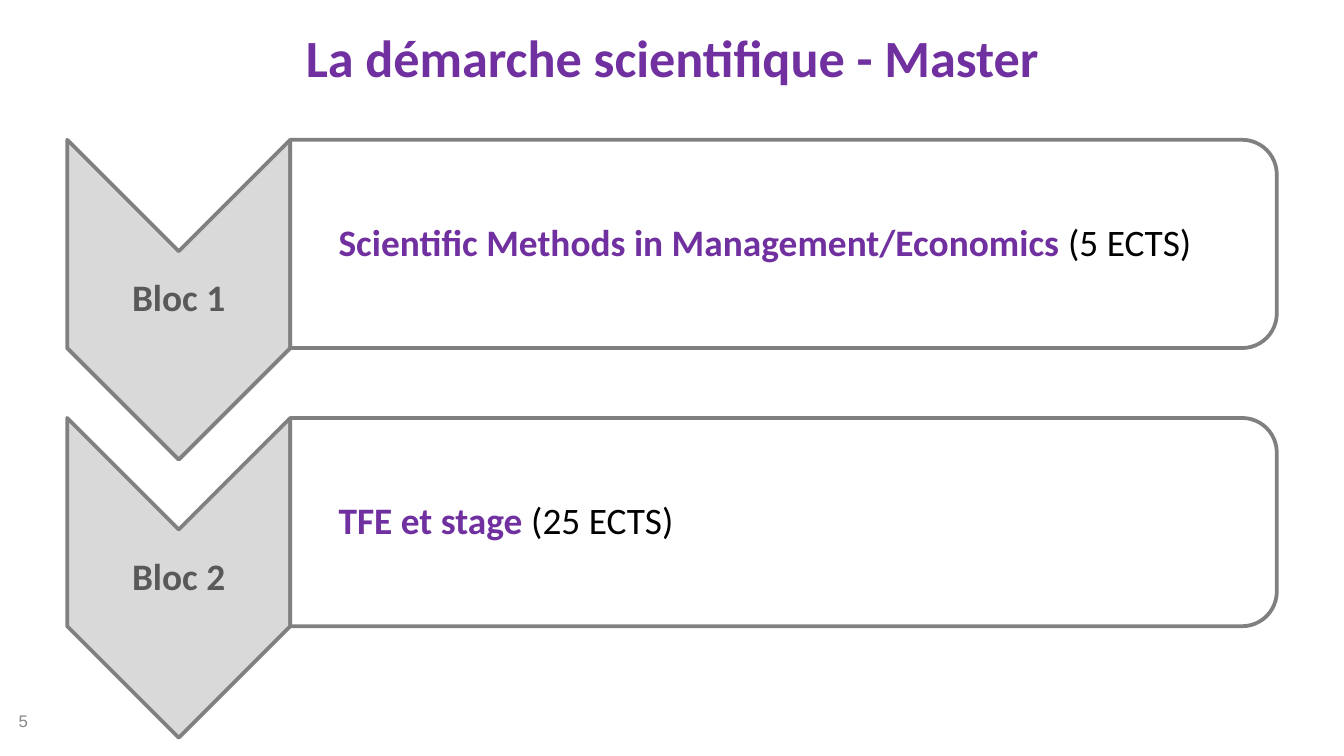
from lxml.etree import SubElement
from pptx import Presentation
from pptx.dml.color import RGBColor
from pptx.enum.shapes import MSO_SHAPE
from pptx.enum.text import MSO_ANCHOR, PP_ALIGN
from pptx.oxml.ns import qn
from pptx.util import Inches, Pt

PURPLE = RGBColor(0x70, 0x30, 0xA0)
DARK_GRAY = RGBColor(0x59, 0x59, 0x59)
MID_GRAY = RGBColor(0x80, 0x80, 0x80)
LIGHT_GRAY = RGBColor(0xD9, 0xD9, 0xD9)
NUMBER_GRAY = RGBColor(0x89, 0x89, 0x89)
WHITE = RGBColor(0xFF, 0xFF, 0xFF)
BLACK = RGBColor(0x00, 0x00, 0x00)

BLOCKS = [
    ("Bloc 1", "Scientific Methods in Management/Economics ", "(5 ECTS)"),
    ("Bloc 2", "TFE et stage ", "(25 ECTS)"),
]
SLIDE_WIDTH = 10
FIRST_TOP = 1.04
BLOCK_STEP = 2.07
CHEVRON_LEFT, CHEVRON_WIDTH, CHEVRON_HEIGHT = 0.5, 1.66, 2.38
PANEL_LEFT, PANEL_WIDTH, PANEL_HEIGHT = 2.16, 7.34, 1.55
THIN_MARGINS = (0.01, 0.01, 0.01, 0.01)
PANEL_MARGINS = (0.16, 0.01, 0.01, 0.01)


class SlideBuilder:
    def __init__(self, slide):
        self.slide = slide
        self.font_name = "Calibri"
        self.line_width = Pt(2)

    def text(self, left, top, width, height, runs, align=PP_ALIGN.LEFT,
             anchor=MSO_ANCHOR.MIDDLE, margins=(0.1, 0.05, 0.1, 0.05),
             indent=0, line_spacing=1.0):
        """Add a text box holding one paragraph; runs are (text, font values) pairs."""
        box = self.slide.shapes.add_textbox(
            Inches(left), Inches(top), Inches(width), Inches(height))
        frame = box.text_frame
        frame.word_wrap = True
        frame.vertical_anchor = anchor
        for side, margin in zip(("left", "top", "right", "bottom"), margins):
            setattr(frame, f"margin_{side}", Inches(margin))
        paragraph = frame.paragraphs[0]
        paragraph.alignment = align
        paragraph.line_spacing = line_spacing
        if indent:
            paragraph._p.get_or_add_pPr().set("marL", str(Inches(indent)))
        for content, values in runs:
            run = paragraph.add_run()
            run.text = content
            self.format_font(run.font, values)

    def format_font(self, font, values):
        values = {"name": self.font_name, **values}
        font.color.rgb = values.pop("color")
        for name, value in values.items():
            setattr(font, name, value)

    def turned_shape(self, kind, left, top, width, height, fill, opacity=100):
        """Add a shape turned by 90 degrees that covers the given area once turned."""
        shape = self.slide.shapes.add_shape(
            kind,
            Inches(left + (width - height) / 2), Inches(top + (height - width) / 2),
            Inches(height), Inches(width))
        shape.rotation = 90
        shape.shadow.inherit = False
        shape.fill.solid()
        shape.fill.fore_color.rgb = fill
        if opacity < 100:
            color = shape._element.spPr.find(qn("a:solidFill"))[0]
            SubElement(color, qn("a:alpha"), val=str(opacity * 1000))
        shape.line.color.rgb = MID_GRAY
        shape.line.width = self.line_width

    def block(self, top, label, course, credits):
        """Add a chevron with its label and the panel beside it."""
        label_font = {"size": Pt(20), "bold": True, "color": DARK_GRAY}
        course_font = {"size": Pt(20), "bold": True, "color": PURPLE}
        credits_font = {"size": Pt(20), "bold": False, "color": BLACK}
        self.turned_shape(MSO_SHAPE.CHEVRON, CHEVRON_LEFT, top,
                          CHEVRON_WIDTH, CHEVRON_HEIGHT, LIGHT_GRAY)
        self.text(CHEVRON_LEFT, top + CHEVRON_WIDTH / 2, CHEVRON_WIDTH,
                  CHEVRON_HEIGHT - CHEVRON_WIDTH, [(label, label_font)],
                  align=PP_ALIGN.CENTER, margins=THIN_MARGINS, line_spacing=0.9)
        self.turned_shape(MSO_SHAPE.ROUND_2_SAME_RECTANGLE, PANEL_LEFT, top,
                          PANEL_WIDTH, PANEL_HEIGHT, WHITE, opacity=90)
        self.text(PANEL_LEFT, top + 0.08, PANEL_WIDTH - 0.08, PANEL_HEIGHT - 0.15,
                  [(course, course_font), (credits, credits_font)],
                  margins=PANEL_MARGINS, indent=0.2, line_spacing=0.9)


def main():
    presentation = Presentation()
    presentation.slide_width = Inches(SLIDE_WIDTH)
    presentation.slide_height = Inches(SLIDE_WIDTH * 9 / 16)
    builder = SlideBuilder(presentation.slides.add_slide(presentation.slide_layouts[6]))

    builder.text(0.04, 5.21, 2.33, 0.3,
                 [("5", {"name": "Arial", "size": Pt(9), "color": NUMBER_GRAY})])
    builder.text(0.5, 0.14, 9, 0.62,
                 [("La démarche scientifique - Master",
                   {"size": Pt(28), "bold": True, "color": PURPLE})],
                 align=PP_ALIGN.CENTER, anchor=MSO_ANCHOR.TOP)
    for index, (label, course, credits) in enumerate(BLOCKS):
        builder.block(FIRST_TOP + index * BLOCK_STEP, label, course, credits)

    presentation.save("out.pptx")


if __name__ == "__main__":
    main()
